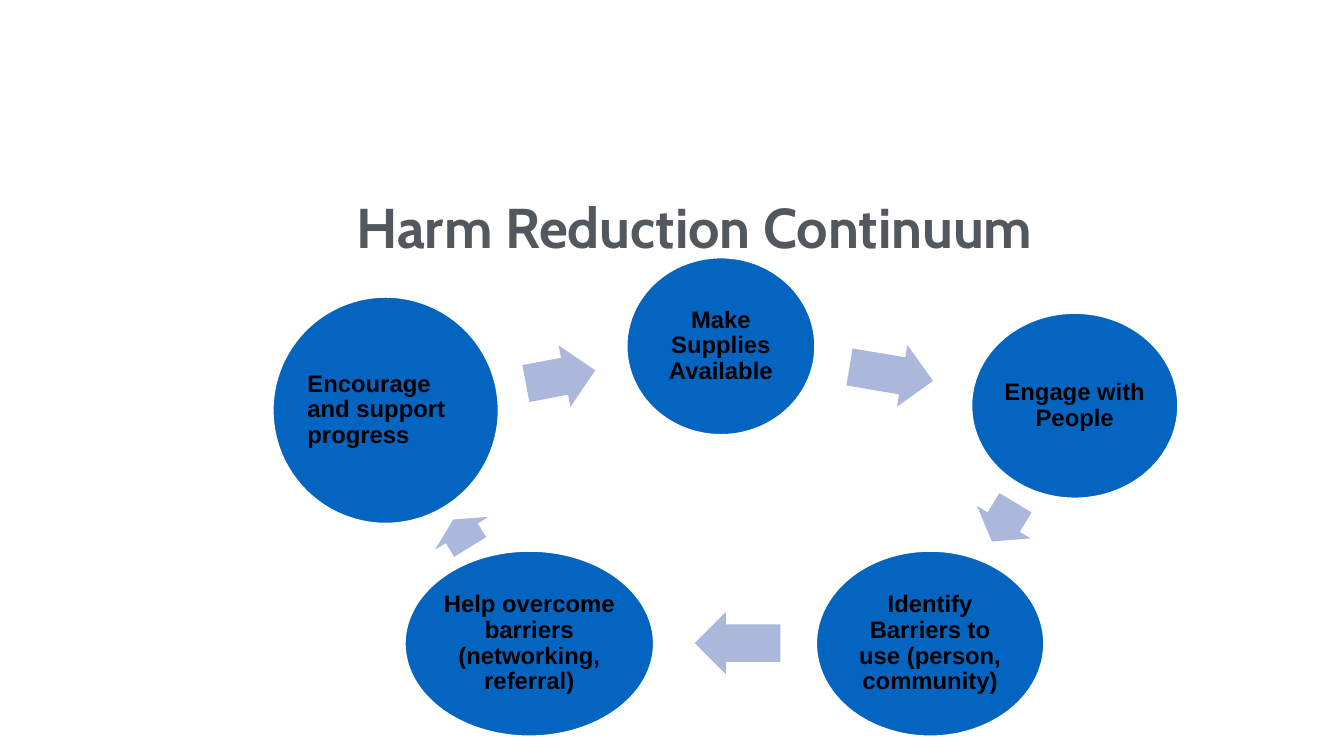
import pptx
import pptx.util
import pptx.dml.color
import pptx.enum.shapes
import pptx.enum.text

Inches, Pt = pptx.util.Inches, pptx.util.Pt
RGB = pptx.dml.color.RGBColor.from_string
SHAPE = pptx.enum.shapes.MSO_SHAPE
ALIGN = pptx.enum.text.PP_ALIGN
MIDDLE = pptx.enum.text.MSO_ANCHOR.MIDDLE

# Content
TITLE = "Harm Reduction Continuum "
TITLE_BOX = (1.23, 1.42, 11.44, 1.65)

# Each step: text, alignment, box (left, top, width, height)
STEPS = [
    ("Make Supplies Available", ALIGN.CENTER, (6.21, 2.55, 1.88, 1.77)),
    ("Engage with People", ALIGN.CENTER, (9.63, 3.1, 2.06, 1.85)),
    ("Identify Barriers to use (person, community)", ALIGN.CENTER,
     (8.09, 5.46, 2.27, 1.85)),
    ("Help overcome barriers (networking, referral)", ALIGN.CENTER,
     (4.01, 5.46, 2.48, 1.85)),
    ("Encourage and support progress", ALIGN.LEFT, (2.7, 2.94, 2.25, 2.26)),
]

# The arrow after each step: left, top, width, turn in degrees
ARROWS = [
    (8.42, 3.4, 0.84, 9.5),
    (9.73, 4.87, 0.45, 121.2),
    (6.89, 6.07, 0.85, 180),
    (4.42, 4.98, 0.32, 238.5),
    (5.21, 3.43, 0.7, 349.2),
]
ARROW_H = 0.62

THEME = {
    "title": ("Cabin", 40, "53585F"),
    "step": ("Arial", 17, "000000"),
    "disc": "0365C0",
    "rim": "FFFFFF",
    "arrow": "ABB8DC",
}


def write(shape, text, style, align, inset):
    frame = shape.text_frame
    frame.text = text
    frame.word_wrap = True
    frame.vertical_anchor = MIDDLE
    frame.margin_left = frame.margin_right = Inches(inset)
    frame.margin_top = frame.margin_bottom = Inches(inset)
    para = frame.paragraphs[0]
    para.alignment = align
    name, size, color = THEME[style]
    font = para.runs[0].font
    font.name, font.size, font.bold = name, Pt(size), True
    font.color.rgb = RGB(color)
    return para


def draw(slide, kind, box, color):
    shape = slide.shapes.add_shape(kind, *map(Inches, box))
    shape.shadow.inherit = False
    shape.fill.solid()
    shape.fill.fore_color.rgb = RGB(color)
    return shape


def main():
    deck = pptx.Presentation()
    deck.slide_width, deck.slide_height = Inches(13.33), Inches(7.5)
    slide = deck.slides.add_slide(deck.slide_layouts[6])

    # Title
    title = slide.shapes.add_textbox(*map(Inches, TITLE_BOX))
    write(title, TITLE, "title", ALIGN.CENTER, 0.05)

    # Cycle: each step with the arrow to the next
    for (text, align, box), (left, top, width, turn) in zip(STEPS, ARROWS):
        disc = draw(slide, SHAPE.OVAL, box, THEME["disc"])
        disc.line.color.rgb = RGB(THEME["rim"])
        disc.line.width = Pt(2)
        para = write(disc, text, "step", align, 0.02)
        para.line_spacing = 0.9

        arrow = draw(slide, SHAPE.RIGHT_ARROW, (left, top, width, ARROW_H),
                     THEME["arrow"])
        arrow.line.fill.background()
        arrow.adjustments[0], arrow.adjustments[1] = 0.6, 0.5
        arrow.rotation = turn

    deck.save("out.pptx")


if __name__ == "__main__":
    main()
